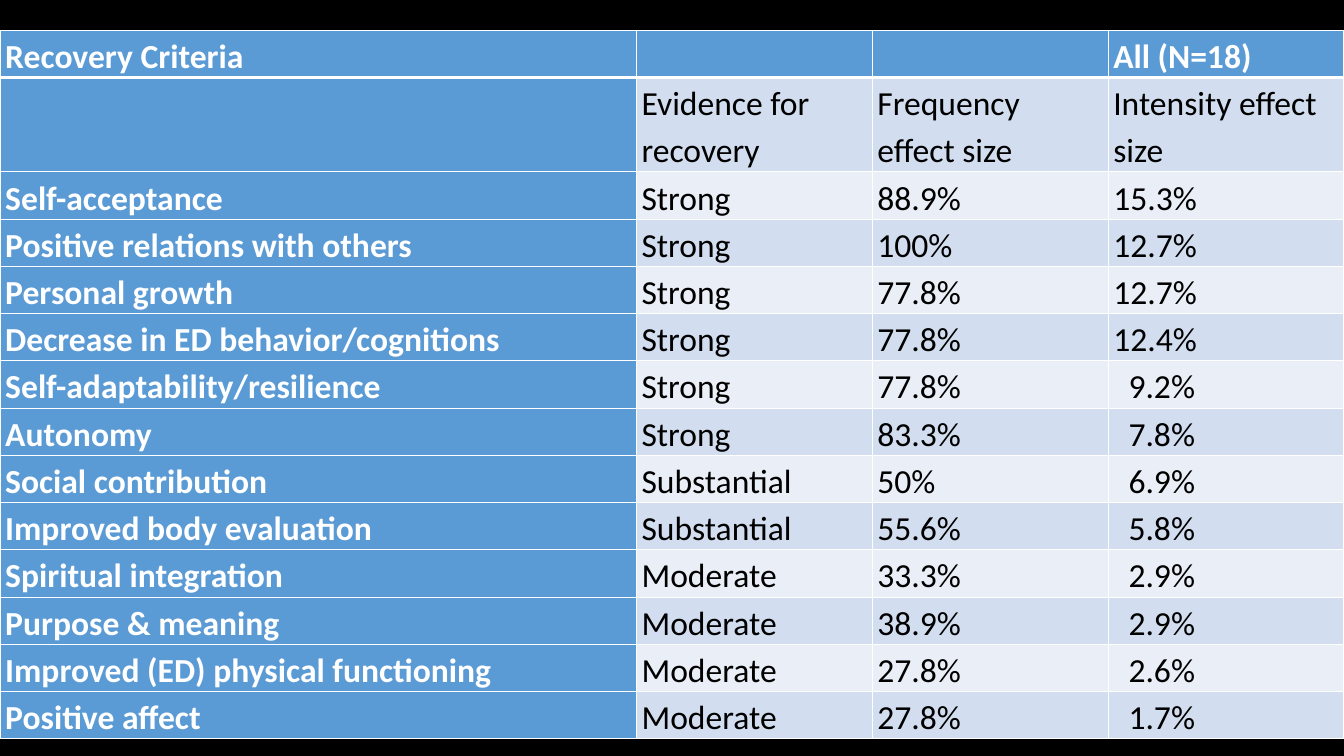
from lxml import etree
from pptx import Presentation
from pptx.dml.color import RGBColor
from pptx.oxml.ns import qn
from pptx.util import Pt

HEADER = ("Recovery Criteria", "", "", "All (N=18)")
SUBHEADER = ("", "Evidence for recovery", "Frequency\neffect size", "Intensity effect size")
CRITERIA = [
    ("Self-acceptance", "Strong", "88.9%", "15.3%"),
    ("Positive relations with others", "Strong", "100%", "12.7%"),
    ("Personal growth", "Strong", "77.8%", "12.7%"),
    ("Decrease in ED behavior/cognitions", "Strong", "77.8%", "12.4%"),
    ("Self-adaptability/resilience", "Strong", "77.8%", "9.2%"),
    ("Autonomy", "Strong", "83.3%", "7.8%"),
    ("Social contribution", "Substantial", "50%", "6.9%"),
    ("Improved body evaluation", "Substantial", "55.6%", "5.8%"),
    ("Spiritual integration", "Moderate", "33.3%", "2.9%"),
    ("Purpose & meaning", "Moderate", "38.9%", "2.9%"),
    ("Improved (ED) physical functioning", "Moderate", "27.8%", "2.6%"),
    ("Positive affect", "Moderate", "27.8%", "1.7%"),
]
ROWS = [HEADER, SUBHEADER, *CRITERIA]

THEME = {
    "font": "Calibri", "size": 32, "spacing": 1.15,
    "background": "000000", "header": "5B9BD5", "bands": ("EAEFF7", "D2DEEF"),
    "light": "FFFFFF", "dark": "000000", "rule": 1, "header_rule": 3,
}
SLIDE_W, SLIDE_H = 1280, 720
TABLE_TOP = 28.8
CRITERION_W = 606
VALUE_W = (SLIDE_W - CRITERION_W) / (len(HEADER) - 1)
ROW_H, SUBHEADER_H = 42.5, 86.4
CELL_INSET = 5
DIGIT_INDENT = 14.5


def write(cell, value, color, bold=False, indent=0):
    tf = cell.text_frame
    tf.text = value
    for p in tf.paragraphs:
        p.line_spacing = THEME["spacing"]
        if indent:
            p._p.get_or_add_pPr().set("marL", str(Pt(indent)))
        for r in p.runs:
            r.font.name = THEME["font"]
            r.font.size = Pt(THEME["size"])
            r.font.bold = bold
            r.font.color.rgb = RGBColor.from_string(color)


def add_borders(cell, **widths):
    """Draw the cell's borders; widths override the usual rule by side (L, R, T, B)."""
    tc_pr = cell._tc.get_or_add_tcPr()
    for i, side in enumerate("LRTB"):
        ln = etree.Element(qn(f"a:ln{side}"), w=str(Pt(widths.get(side, THEME["rule"]))))
        fill = etree.SubElement(ln, qn("a:solidFill"))
        etree.SubElement(fill, qn("a:srgbClr"), val=THEME["light"])
        tc_pr.insert(i, ln)


def format_cell(cell, value, row, col):
    heading = row == 0 or col == 0
    cell.margin_left = cell.margin_right = Pt(CELL_INSET)
    cell.margin_top = cell.margin_bottom = 0
    cell.fill.solid()
    fill = THEME["header"] if heading else THEME["bands"][row % 2]
    cell.fill.fore_color.rgb = RGBColor.from_string(fill)
    sides = {0: "B", 1: "T"}
    add_borders(cell, **({sides[row]: THEME["header_rule"]} if row in sides else {}))
    if value:
        single_digit = col == 3 and value.find(".") == 1
        write(cell, value, THEME["light" if heading else "dark"], bold=heading,
              indent=DIGIT_INDENT if single_digit else 0)


def main():
    prs = Presentation()
    prs.slide_width, prs.slide_height = Pt(SLIDE_W), Pt(SLIDE_H)
    s = prs.slides.add_slide(prs.slide_layouts[6])
    s.background.fill.solid()
    s.background.fill.fore_color.rgb = RGBColor.from_string(THEME["background"])

    heights = [SUBHEADER_H if row is SUBHEADER else ROW_H for row in ROWS]
    table = s.shapes.add_table(len(ROWS), len(HEADER), 0, Pt(TABLE_TOP),
                               Pt(SLIDE_W), Pt(sum(heights))).table
    for i, column in enumerate(table.columns):
        column.width = Pt(VALUE_W if i else CRITERION_W)
    for i, (values, height) in enumerate(zip(ROWS, heights)):
        table.rows[i].height = Pt(height)
        for j, value in enumerate(values):
            format_cell(table.cell(i, j), value, i, j)
    prs.save("out.pptx")


if __name__ == "__main__":
    main()
